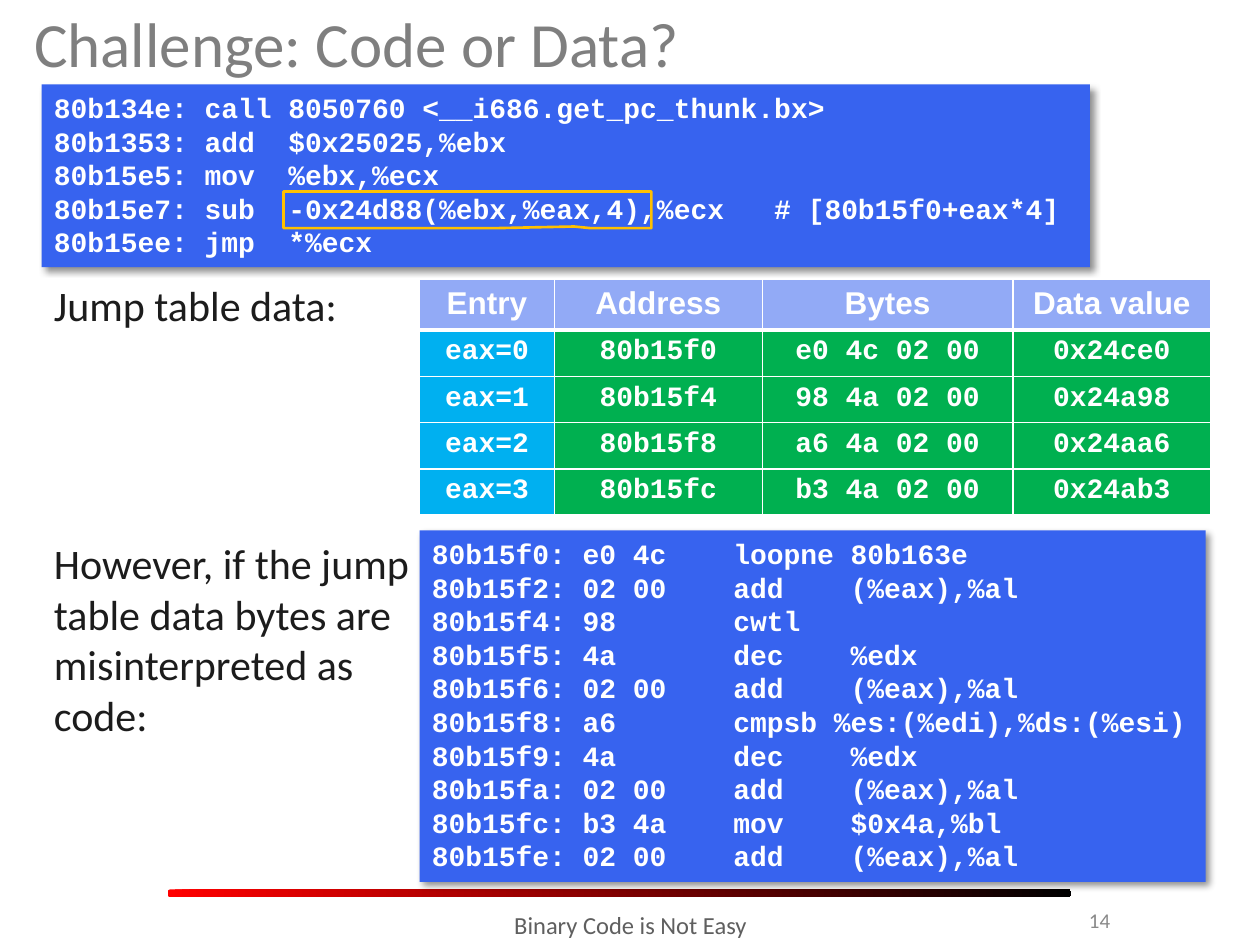
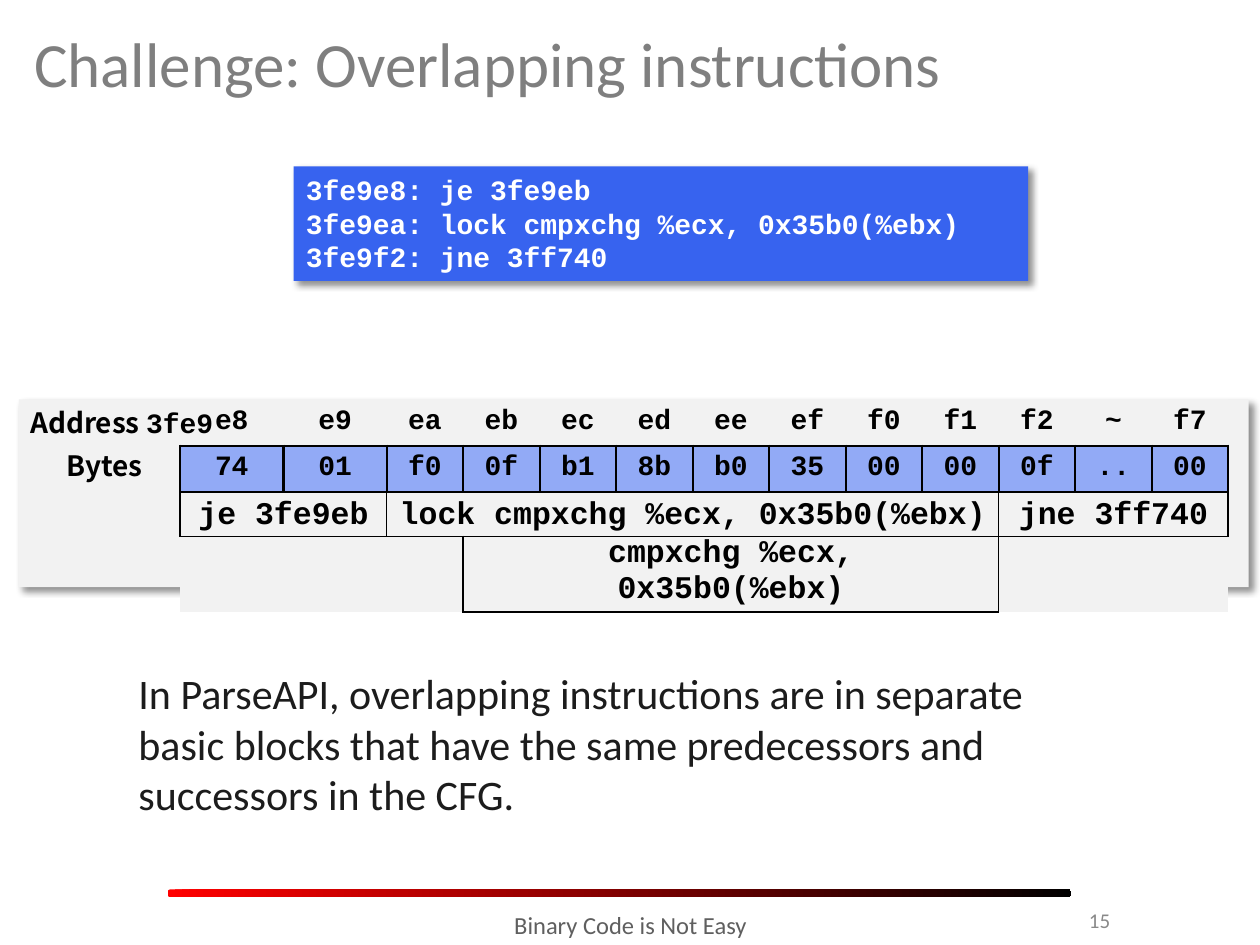
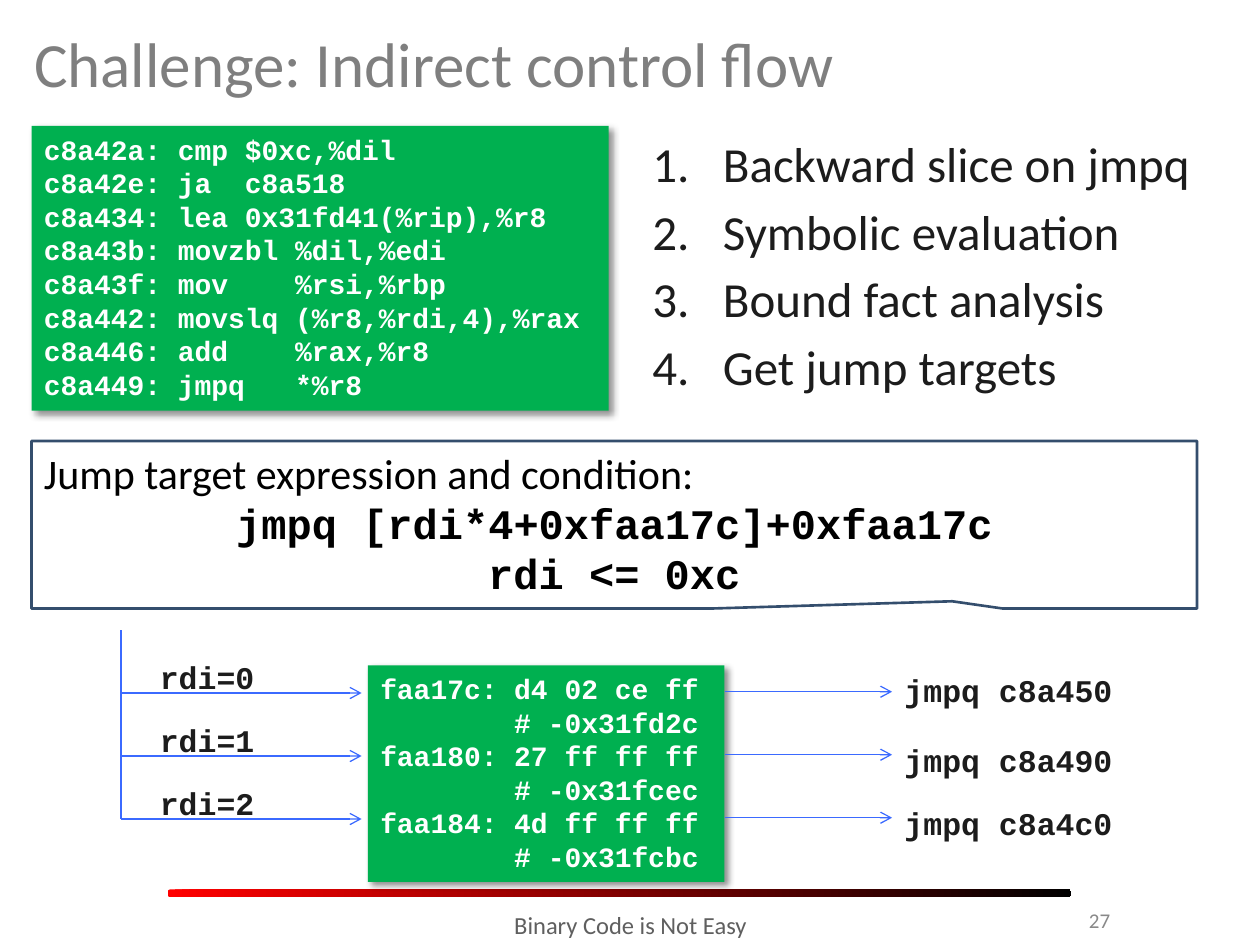
from collections import namedtuple

from lxml.etree import SubElement
from pptx import Presentation
from pptx.dml.color import RGBColor
from pptx.enum.shapes import MSO_CONNECTOR, MSO_SHAPE
from pptx.enum.text import MSO_ANCHOR, MSO_AUTO_SIZE, PP_ALIGN
from pptx.oxml.ns import qn
from pptx.util import Inches, Pt

COLORS = {
    "white": "FFFFFF", "black": "000000", "ink": "1C1C1C", "title": "7F7F7F",
    "footer": "5F5F5F", "number": "898989", "red": "FF0000", "blue": "3763EF",
    "pale_blue": "92AAF6", "sky": "00B0F0", "green": "00B050", "gray": "F2F2F2",
    "amber": "FFC000", "navy": "344E6D", "arrow": "3B6AFF",
}
PLAIN_TABLE = "{2D5ABB26-0587-4C30-8999-92F81FD0307C}"

Box = namedtuple("Box", "left top width height")
Style = namedtuple("Style", "font size color bold", defaults=[False])

TITLE = Style("Calibri", 36, "title")
PROSE = Style("Calibri", 24, "ink")
STEP = Style("Calibri", 28, "ink")
CODE = Style("Courier New", 16, "white", True)
LABEL = Style("Courier New", 18, "ink", True)
HEADER = Style("Arial", 18, "white", True)
BYTE = Style("Courier New", 16, "black", True)
INSTRUCTION = Style("Courier New", 18, "black", True)
ROW_NAME = Style("Noto Sans CJK JP", 16, "black", True)

JUMP_CODE = """\
80b134e: call 8050760 <__i686.get_pc_thunk.bx>
80b1353: add  $0x25025,%ebx
80b15e5: mov  %ebx,%ecx
80b15e7: sub  -0x24d88(%ebx,%eax,4),%ecx   # [80b15f0+eax*4]
80b15ee: jmp  *%ecx"""

MISREAD_CODE = """\
80b15f0: e0 4c    loopne 80b163e
80b15f2: 02 00    add    (%eax),%al
80b15f4: 98       cwtl
80b15f5: 4a       dec    %edx
80b15f6: 02 00    add    (%eax),%al
80b15f8: a6       cmpsb %es:(%edi),%ds:(%esi)
80b15f9: 4a       dec    %edx
80b15fa: 02 00    add    (%eax),%al
80b15fc: b3 4a    mov    $0x4a,%bl
80b15fe: 02 00    add    (%eax),%al"""

OVERLAP_CODE = """\
3fe9e8: je 3fe9eb
3fe9ea: lock cmpxchg %ecx, 0x35b0(%ebx)
3fe9f2: jne 3ff740"""

INDIRECT_CODE = """\
c8a42a: cmp $0xc,%dil
c8a42e: ja  c8a518
c8a434: lea 0x31fd41(%rip),%r8
c8a43b: movzbl %dil,%edi
c8a43f: mov    %rsi,%rbp
c8a442: movslq (%r8,%rdi,4),%rax
c8a446: add    %rax,%r8
c8a449: jmpq   *%r8"""

TABLE_BYTES = """\
faa17c: d4 02 ce ff
        # -0x31fd2c
faa180: 27 ff ff ff
        # -0x31fcec
faa184: 4d ff ff ff
        # -0x31fcbc"""

JUMP_TABLE = [
    ["Entry", "Address", "Bytes", "Data value"],
    ["eax=0", "80b15f0", "e0 4c 02 00", "0x24ce0"],
    ["eax=1", "80b15f4", "98 4a 02 00", "0x24a98"],
    ["eax=2", "80b15f8", "a6 4a 02 00", "0x24aa6"],
    ["eax=3", "80b15fc", "b3 4a 02 00", "0x24ab3"],
]
ADDRESSES = "e8 e9 ea eb ec ed ee ef f0 f1 f2 ~ f7".split()
BYTES = "74 01 f0 0f b1 8b b0 35 00 00 0f .. 00".split()


def color(name):
    return RGBColor.from_string(COLORS[name])


def inches(box):
    return [Inches(length) for length in box]


def add_span(para, text, style):
    span = para.add_run()
    span.text = text
    span.font.name = style.font
    span.font.size = Pt(style.size)
    span.font.bold = style.bold
    span.font.color.rgb = color(style.color)


def next_para(frame):
    """Return the empty first paragraph, or a new one once it has text."""
    first = frame.paragraphs[0]
    return frame.add_paragraph() if first.runs else first


def add_line(frame, text, style, align=PP_ALIGN.LEFT):
    para = next_para(frame)
    para.alignment = align
    add_span(para, text, style)
    return para


def add_text(page, box, text="", style=PROSE, align=PP_ALIGN.LEFT, anchor=MSO_ANCHOR.TOP):
    frame = page.shapes.add_textbox(*inches(box)).text_frame
    frame.word_wrap = True
    frame.vertical_anchor = anchor
    if text:
        add_line(frame, text, style, align)
    return frame


def add_block(page, kind, box, fill=None, line=None):
    block = page.shapes.add_shape(kind, *inches(box))
    block.shadow.inherit = False
    if fill:
        block.fill.solid()
        block.fill.fore_color.rgb = color(fill)
    else:
        block.fill.background()
    if line:
        block.line.color.rgb = color(line)
        block.line.width = Pt(1.5)
    else:
        block.line.fill.background()
    block.text_frame.word_wrap = True
    block.text_frame.vertical_anchor = MSO_ANCHOR.TOP
    return block


def add_shadowed_rectangle(page, box, fill):
    block = add_block(page, MSO_SHAPE.RECTANGLE, box, fill)
    effects = block._element.spPr.find(qn("a:effectLst"))
    shadow = SubElement(effects, qn("a:outerShdw"), blurRad=str(Pt(4)), dist=str(Pt(3)),
                        dir=str(45 * 60000), algn="tl", rotWithShape="0")
    shade = SubElement(shadow, qn("a:srgbClr"), val=COLORS["black"])
    SubElement(shade, qn("a:alpha"), val="43000")
    return block


def add_code_panel(page, box, code, fill="blue"):
    frame = add_shadowed_rectangle(page, box, fill).text_frame
    for line in code.splitlines():
        add_line(frame, line, CODE)


def add_callout(page, box, line, fill=None):
    """Add a callout whose pointer tip lies just inside its lower edge."""
    callout = add_block(page, MSO_SHAPE.RECTANGULAR_CALLOUT, box, fill, line)
    callout.adjustments[0] = 0.29
    callout.adjustments[1] = 0.457
    return callout.text_frame


def add_rule(page, start, end, arrow=True):
    rule = page.shapes.add_connector(MSO_CONNECTOR.STRAIGHT, *inches(start + end))
    rule.line.color.rgb = color("arrow")
    rule.line.width = Pt(0.75)
    if arrow:
        SubElement(rule.line._get_or_add_ln(), qn("a:tailEnd"), type="arrow")
    SubElement(rule._element.spPr, qn("a:effectLst"))


def add_plain_table(page, box, column_widths, row_heights):
    size = len(row_heights), len(column_widths)
    table = page.shapes.add_table(*size, *inches(box)).table
    table.first_row = table.horz_banding = False
    table._tbl.tblPr.find(qn("a:tableStyleId")).text = PLAIN_TABLE
    for column, width in zip(table.columns, column_widths):
        column.width = Inches(width)
    for row, height in zip(table.rows, row_heights):
        row.height = Inches(height)
    return table


def fill_cell(cell, text, style, fill, borders=(), border_color="black"):
    """Format a cell; borders pairs side letters with a width in points."""
    widths = {side: points for sides, points in borders for side in sides}
    properties = cell._tc.get_or_add_tcPr()
    for side in "LRTB":
        if side in widths:
            edge = SubElement(properties, qn(f"a:ln{side}"), w=str(Pt(widths[side])))
            paint = SubElement(edge, qn("a:solidFill"))
            SubElement(paint, qn("a:srgbClr"), val=COLORS[border_color])
    cell.fill.solid()
    cell.fill.fore_color.rgb = color(fill)
    if text:
        add_line(cell.text_frame, text, style, PP_ALIGN.CENTER)


def add_jump_table(page, box):
    table = add_plain_table(page, box, [1.07, 1.65, 1.99, 1.57], [0.38] + [0.35] * 4)
    for row, values in enumerate(JUMP_TABLE):
        for column, value in enumerate(values):
            body_fill = "green" if column else "sky"
            top, bottom = (3 if row == 1 else 1), (1 if row else 3)
            fill_cell(table.cell(row, column), value, CODE if row else HEADER,
                      body_fill if row else "pale_blue",
                      [("LR", 1), ("T", top), ("B", bottom)], "white")


def add_instruction_cell(table, row, first, last, text, borders, side_margin=0.05):
    cell = table.cell(row, first)
    cell.merge(table.cell(row, last))
    cell.margin_left = cell.margin_right = Inches(side_margin)
    cell.margin_top = Inches(0.05 if row == 2 else 0)
    cell.margin_bottom = 0
    fill_cell(cell, text, INSTRUCTION, "gray", borders)


def add_byte_table(page, box):
    wide = 0.82
    narrow = (box.width - 2 * wide) / (len(BYTES) - 2)
    widths = [wide] * 2 + [narrow] * (len(BYTES) - 2)
    table = add_plain_table(page, box, widths, [0.36, 0.37, 0.35, 0.6])
    for column, (address, byte) in enumerate(zip(ADDRESSES, BYTES)):
        fill_cell(table.cell(0, column), address, BYTE, "gray", [("B", 1.5)])
        fill_cell(table.cell(1, column), byte, BYTE, "pale_blue", [("LRTB", 1.5)])
    decoded = [(0, 1, "je 3fe9eb"), (2, 9, "lock cmpxchg %ecx, 0x35b0(%ebx)"),
               (10, 12, "jne 3ff740")]
    for first, last, text in decoded:
        add_instruction_cell(table, 2, first, last, text, [("LRB", 1), ("T", 1.5)])
    for column in range(3):
        fill_cell(table.cell(3, column), "", BYTE, "gray", [("T", 1)])
    add_instruction_cell(table, 3, 3, 9, "cmpxchg %ecx, 0x35b0(%ebx)", [("LRTB", 1)], 1.1)
    add_instruction_cell(table, 3, 10, 12, "", [("LT", 1)])


def add_row_name(page, box, *spans):
    frame = add_text(page, box)
    frame.word_wrap = False
    frame.margin_left, frame.margin_right = 0, Inches(0.04)
    for text, style in spans:
        add_span(frame.paragraphs[0], text, style)


def add_byte_map(page, box):
    add_shadowed_rectangle(page, box, "gray")
    add_byte_table(page, Box(box.left + 1.28, box.top, 8.32, 1.68))
    add_row_name(page, Box(box.left + 0.09, box.top, 1.57, 0.4),
                 ("Address ", ROW_NAME), ("3fe9", BYTE))
    add_row_name(page, Box(box.left + 0.38, box.top + 0.34, 0.71, 0.4), ("Bytes", ROW_NAME))


def add_steps(page, box, steps):
    frame = add_text(page, box)
    for index, step in enumerate(steps):
        para = next_para(frame)
        properties = para._p.get_or_add_pPr()
        properties.set("marL", str(Inches(0.56)))
        properties.set("indent", str(Inches(-0.56)))
        SubElement(properties, qn("a:buFont"), typeface="+mj-lt")
        SubElement(properties, qn("a:buAutoNum"), type="arabicPeriod")
        if index:
            para.space_before = Pt(5)
        add_span(para, step, STEP)


def add_target_expression(page, box):
    frame = add_callout(page, box, "navy", "white")
    add_line(frame, "Jump target expression and condition:", PROSE._replace(color="black"))
    for code in ("jmpq [rdi*4+0xfaa17c]+0xfaa17c", "rdi <= 0xc"):
        add_line(frame, code, INSTRUCTION._replace(size=24), PP_ALIGN.CENTER)


def add_jump_diagram(page, box):
    """Draw index values leading through the table bytes to jump targets."""
    left, top = box.left, box.top
    add_rule(page, (left, top), (left, top + box.height - 0.5), arrow=False)
    panel = Box(left + 1.96, top + 0.28, 2.83, 1.72)
    add_code_panel(page, panel, TABLE_BYTES, "green")
    panel_right = panel.left + panel.width
    targets = [("c8a450", 0.28), ("c8a490", 0.83), ("c8a4c0", 1.33)]
    for index, (target, offset) in enumerate(targets):
        level = top + 0.5 * (index + 1)
        add_rule(page, (left, level), (left + 1.91, level))
        add_rule(page, (panel_right, level - 0.01), (panel_right + 1.33, level - 0.01))
        add_text(page, Box(left + 0.21, level - 0.33, 1.92, 0.5), f"rdi={index}", LABEL)
        add_text(page, Box(left + 6.12, top + offset, 1.92, 0.5), f"jmpq {target}", LABEL)


def add_footer(page, number):
    band = add_block(page, MSO_SHAPE.ROUNDED_RECTANGLE, Box(1.33, 7.06, 7.17, 0.06))
    band.adjustments[0] = 0.33
    band.fill.gradient()
    band.fill.gradient_angle = 0
    for stop, position, name in zip(band.fill.gradient_stops, (0, 1), ("red", "black")):
        stop.position = position
        stop.color.rgb = color(name)
    add_text(page, Box(7.58, 7.1, 1.33, 0.4), str(number), Style("Calibri", 12, "number"),
             PP_ALIGN.RIGHT, MSO_ANCHOR.MIDDLE)
    add_text(page, Box(2.42, 7.17, 5.17, 0.4), "Binary Code is Not Easy",
             Style("Calibri", 14, "footer"), PP_ALIGN.CENTER)


def add_page(deck, title, number, title_top=0.08):
    page = deck.slides.add_slide(deck.slide_layouts[5])
    holder = page.shapes.title
    holder.left, holder.top, holder.width, holder.height = inches(
        Box(0.17, title_top, 9.67, 0.83))
    frame = holder.text_frame
    frame.auto_size = MSO_AUTO_SIZE.NONE
    frame.vertical_anchor = MSO_ANCHOR.MIDDLE
    add_line(frame, title, TITLE)
    add_footer(page, number)
    return page


def build_code_or_data(deck):
    page = add_page(deck, "Challenge: Code or Data?", 14, title_top=-0.08)
    add_code_panel(page, Box(0.33, 0.67, 8.32, 1.45), JUMP_CODE)
    add_callout(page, Box(2.25, 1.52, 2.92, 0.29), "amber")
    add_text(page, Box(0.33, 2.17, 2.84, 0.5), "Jump table data:")
    add_jump_table(page, Box(3.33, 2.22, 6.28, 1.78))
    add_text(page, Box(0.33, 4.22, 3.17, 2.12),
             "However, if the jump table data bytes are misinterpreted as code:")
    add_code_panel(page, Box(3.33, 4.21, 6.24, 2.79), MISREAD_CODE)


def build_overlapping_instructions(deck):
    page = add_page(deck, "Challenge: Overlapping instructions", 15)
    add_code_panel(page, Box(2.33, 1.32, 5.83, 0.91), OVERLAP_CODE)
    add_byte_map(page, Box(0.15, 3.17, 9.76, 1.49))
    add_text(page, Box(1, 5.25, 7.75, 1.33),
             "In ParseAPI, overlapping instructions are in separate basic blocks "
             "that have the same predecessors and successors in the CFG.")


def build_indirect_control_flow(deck):
    page = add_page(deck, "Challenge: Indirect control flow", 27)
    add_code_panel(page, Box(0.25, 1, 4.58, 2.26), INDIRECT_CODE, "green")
    add_steps(page, Box(5.08, 1.01, 4.67, 2.25),
              ["Backward slice on jmpq", "Symbolic evaluation",
               "Bound fact analysis", "Get jump targets"])
    add_target_expression(page, Box(0.25, 3.5, 9.25, 1.33))
    add_jump_diagram(page, Box(0.96, 5, 8.04, 2))


def main():
    deck = Presentation()
    deck.slide_width, deck.slide_height = Inches(10), Inches(7.5)
    build_code_or_data(deck)
    build_overlapping_instructions(deck)
    build_indirect_control_flow(deck)
    deck.save("out.pptx")


if __name__ == "__main__":
    main()
